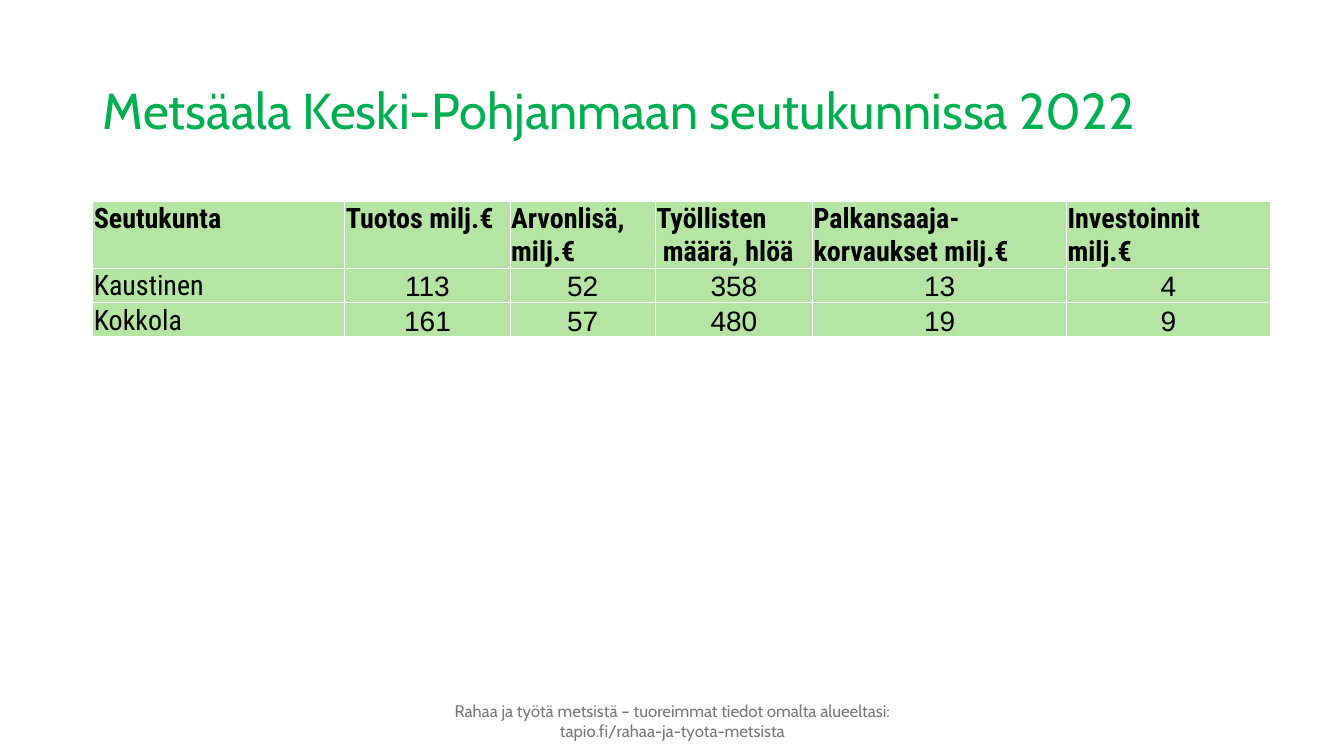
from dataclasses import dataclass

from lxml.etree import SubElement
from pptx import Presentation
from pptx.dml.color import RGBColor
from pptx.enum.text import MSO_ANCHOR as Anchor, PP_ALIGN as Align
from pptx.oxml.ns import qn
from pptx.util import Inches, Pt


@dataclass(frozen=True)
class Theme:
    title: str = "00B050"
    footer: str = "797979"
    text: str = "000000"
    cell: str = "B4E5A2"
    border: str = "FFFFFF"
    title_size: int = 36
    table_size: int = 20
    footer_size: int = 12
    border_width: int = 1
    heading_font: str = "Cabin"
    label_font: str = "Roboto Condensed"
    number_font: str = "Arial"


@dataclass(frozen=True)
class Column:
    heading: str
    width: float
    values: tuple[str, str]


THEME = Theme()
COLUMNS = (
    Column("Seutukunta", 2.5, ("Kaustinen", "Kokkola")),
    Column("Tuotos milj.€", 1.64, ("113", "161")),
    Column("Arvonlisä, milj.€", 1.44, ("52", "57")),
    Column("Työllisten\n määrä, hlöä", 1.56, ("358", "480")),
    Column("Palkansaaja-korvaukset milj.€", 2.52, ("13", "19")),
    Column("Investoinnit\nmilj.€", 2.02, ("4", "9")),
)
ROW_HEIGHTS = (0.66, 0.34, 0.34)


def write(tf, text: str, font: str, size: int, color: str,
          align: Align = Align.LEFT, bold: bool = False) -> None:
    tf.text = text
    for p in tf.paragraphs:
        p.alignment = align
        for r in p.runs:
            r.font.name = font
            r.font.size = Pt(size)
            r.font.bold = bold
            r.font.color.rgb = RGBColor.from_string(color)


def add_borders(cell) -> None:
    props = cell._tc.get_or_add_tcPr()
    for side in ("a:lnL", "a:lnR", "a:lnT", "a:lnB"):
        line = SubElement(props, qn(side), w=str(Pt(THEME.border_width)))
        fill = SubElement(line, qn("a:solidFill"))
        SubElement(fill, qn("a:srgbClr"), val=THEME.border)


def fill_cell(cell, text: str, is_header: bool, is_label: bool) -> None:
    is_number = not (is_header or is_label)
    inset = Inches(0 if is_number else 0.01)
    cell.margin_left = cell.margin_top = cell.margin_right = inset
    cell.margin_bottom = 0
    cell.vertical_anchor = Anchor.TOP if is_header else Anchor.BOTTOM
    write(cell.text_frame, text,
          THEME.number_font if is_number else THEME.label_font,
          THEME.table_size, THEME.text,
          Align.CENTER if is_number else Align.LEFT, is_header)
    add_borders(cell)
    cell.fill.solid()
    cell.fill.fore_color.rgb = RGBColor.from_string(THEME.cell)


def add_title(s) -> None:
    title = s.shapes.title
    title.left, title.top = Inches(0.92), Inches(0.4)
    title.width, title.height = Inches(11.5), Inches(1.45)
    tf = title.text_frame
    tf.vertical_anchor = Anchor.MIDDLE
    write(tf, "Metsäala Keski-Pohjanmaan seutukunnissa 2022",
          THEME.heading_font, THEME.title_size, THEME.title)
    tf.paragraphs[0].line_spacing = 0.9


def add_region_table(s) -> None:
    width = sum(column.width for column in COLUMNS)
    table = s.shapes.add_table(
        len(ROW_HEIGHTS), len(COLUMNS), Inches(0.92), Inches(2),
        Inches(width), Inches(sum(ROW_HEIGHTS))).table
    for row, height in zip(table.rows, ROW_HEIGHTS):
        row.height = Inches(height)
    for c, column in enumerate(COLUMNS):
        table.columns[c].width = Inches(column.width)
        for r, text in enumerate((column.heading, *column.values)):
            fill_cell(table.cell(r, c), text, r == 0, c == 0)


def add_footer(s) -> None:
    tf = s.shapes.add_textbox(
        Inches(4.26), Inches(6.95), Inches(4.82), Inches(0.4)).text_frame
    tf.word_wrap = True
    tf.vertical_anchor = Anchor.MIDDLE
    write(tf, "Rahaa ja työtä metsistä – tuoreimmat tiedot omalta alueeltasi: "
          "tapio.fi/rahaa-ja-tyota-metsista",
          THEME.heading_font, THEME.footer_size, THEME.footer, Align.CENTER)


def main() -> None:
    prs = Presentation()
    prs.slide_width, prs.slide_height = Inches(13.33), Inches(7.5)
    s = prs.slides.add_slide(prs.slide_layouts[5])  # title only
    add_title(s)
    add_region_table(s)
    add_footer(s)
    prs.save("out.pptx")


if __name__ == "__main__":
    main()
